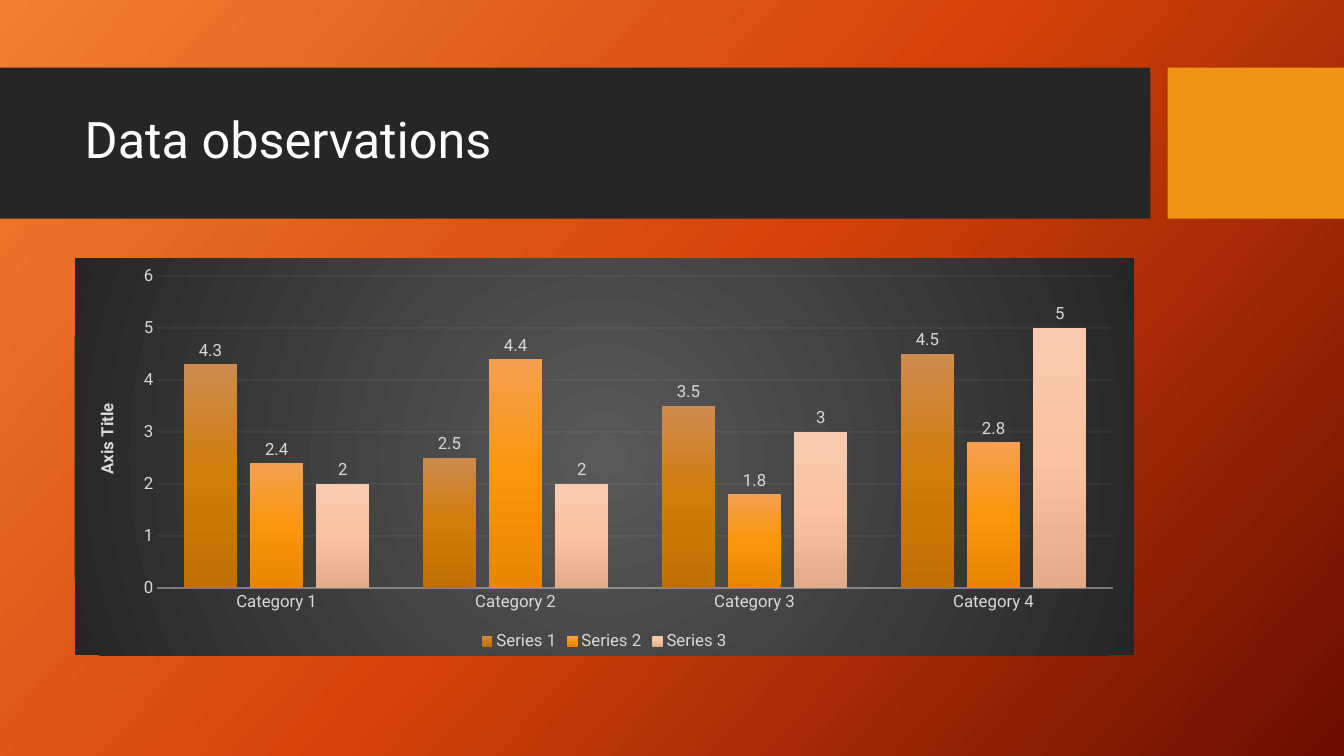
"""Build the data observations slide with its clustered column chart."""
from dataclasses import dataclass

from pptx import Presentation
from pptx.chart.data import CategoryChartData
from pptx.dml.color import RGBColor
from pptx.enum.chart import XL_CHART_TYPE, XL_LABEL_POSITION, XL_LEGEND_POSITION, XL_TICK_MARK
from pptx.enum.shapes import MSO_SHAPE
from pptx.enum.text import MSO_ANCHOR, MSO_AUTO_SIZE, PP_ALIGN
from pptx.oxml import parse_xml
from pptx.oxml.ns import nsdecls, qn
from pptx.util import Inches, Pt

COLUMNS = XL_CHART_TYPE.COLUMN_CLUSTERED
OUTSIDE_END = XL_LABEL_POSITION.OUTSIDE_END
LEGEND_BOTTOM = XL_LEGEND_POSITION.BOTTOM
NO_TICKS = XL_TICK_MARK.NONE
RECTANGLE = MSO_SHAPE.RECTANGLE
MIDDLE = MSO_ANCHOR.MIDDLE
LEFT = PP_ALIGN.LEFT
NO_AUTOFIT = MSO_AUTO_SIZE.NONE

TITLE = "Data observations"
AXIS_TITLE = "Axis Title"
CATEGORIES = [f"Category {number}" for number in range(1, 5)]
SERIES = {
    "Series 1": (4.3, 2.5, 3.5, 4.5),
    "Series 2": (2.4, 4.4, 1.8, 2.8),
    "Series 3": (2, 2, 3, 5),
}


@dataclass(frozen=True)
class Theme:
    font: str = "Roboto"
    title_size: int = 36
    chart_size: int = 12
    white: str = "FFFFFF"
    chart_text: str = "D9D9D9"
    chart_line: str = "F2F2F2"
    band: str = "262626"
    accent: str = "F09415"
    background: tuple = ("F18031", "D54209", "6A0D00")
    chart_area: tuple = ("595959", "262626")
    columns: tuple = (
        ("CE8B4F", "D07C08", "C07000"),
        ("F4A050", "FB960A", "E88600"),
        ("F8CBB0", "FAC29E", "E3AB87"),
    )


THEME = Theme()
SLIDE_WIDTH, SLIDE_HEIGHT = 13.33, 7.5
BAND_TOP, BAND_HEIGHT, BAND_WIDTH = 0.67, 1.5, 11.41
ACCENT_LEFT = 11.58
CONTENT_LEFT, CONTENT_WIDTH = 0.74, 10.51
TITLE_TOP, TITLE_HEIGHT = 0.82, 1.18
CHART_TOP, CHART_HEIGHT = 2.56, 3.94


def gradient(colors, angle=None):
    """Return an evenly stepped gradient fill, radial when no angle is given."""
    step = 100000 // (len(colors) - 1)
    stops = "".join(
        f'<a:gs pos="{index * step}"><a:srgbClr val="{color}"/></a:gs>'
        for index, color in enumerate(colors)
    )
    if angle is None:
        direction = (
            '<a:path path="circle"><a:fillToRect l="50000" t="50000" '
            'r="50000" b="50000"/></a:path>'
        )
    else:
        direction = f'<a:lin ang="{angle * 60000}" scaled="0"/>'
    return parse_xml(
        f'<a:gradFill {nsdecls("a")} rotWithShape="1">'
        f"<a:gsLst>{stops}</a:gsLst>{direction}</a:gradFill>"
    )


def apply_gradient(fill, owner, colors, angle):
    """Give a fill its own gradient stops and direction."""
    fill.gradient()
    default = owner.find(".//" + qn("a:gradFill"))
    default.getparent().replace(default, gradient(colors, angle))


def set_font(font, size, color, bold=False):
    """Set the theme typeface with a size, colour and weight."""
    font.name = THEME.font
    font.size = Pt(size)
    font.bold = bold
    font.color.rgb = RGBColor.from_string(color)


def set_line(line, width, opacity):
    """Draw a translucent chart line."""
    line.width = Pt(width)
    line.color.rgb = RGBColor.from_string(THEME.chart_line)
    color = line._ln.find(".//" + qn("a:srgbClr"))
    color.append(parse_xml(f'<a:alpha {nsdecls("a")} val="{opacity * 1000}"/>'))


def add_band(slide, left, width, color):
    """Add one block of the header strip."""
    band = slide.shapes.add_shape(
        RECTANGLE, Inches(left), Inches(BAND_TOP), Inches(width), Inches(BAND_HEIGHT)
    )
    band.shadow.inherit = False
    band.fill.solid()
    band.fill.fore_color.rgb = RGBColor.from_string(color)
    band.line.fill.background()


def add_title(slide):
    """Place the title over the header strip."""
    title = slide.shapes.title
    title.left, title.top = Inches(CONTENT_LEFT), Inches(TITLE_TOP)
    title.width, title.height = Inches(CONTENT_WIDTH), Inches(TITLE_HEIGHT)
    frame = title.text_frame
    frame.word_wrap = True
    frame.auto_size = NO_AUTOFIT
    frame.vertical_anchor = MIDDLE
    paragraph = frame.paragraphs[0]
    paragraph.alignment = LEFT
    paragraph.line_spacing = 0.9
    run = paragraph.add_run()
    run.text = TITLE
    set_font(run.font, THEME.title_size, THEME.white)
    slide.shapes._spTree.append(title._element)


def style_axes(chart):
    """Format both axes, the gridlines and the value axis title."""
    for axis in (chart.category_axis, chart.value_axis):
        axis.major_tick_mark = axis.minor_tick_mark = NO_TICKS
        set_font(axis.tick_labels.font, THEME.chart_size, THEME.chart_text)
    set_line(chart.category_axis.format.line, 1, 54)
    values = chart.value_axis
    values.minimum_scale, values.maximum_scale, values.major_unit = 0, 6, 1
    values.format.line.fill.background()
    values.has_major_gridlines = True
    set_line(values.major_gridlines.format.line, 0.75, 10)
    run = values.axis_title.text_frame.paragraphs[0].add_run()
    run.text = AXIS_TITLE
    set_font(run.font, THEME.chart_size, THEME.chart_text, bold=True)


def add_chart(slide):
    """Add the column chart with its gradients, labels and legend."""
    data = CategoryChartData()
    data.categories = CATEGORIES
    for name, values in SERIES.items():
        data.add_series(name, values)
    chart = slide.shapes.add_chart(
        COLUMNS, Inches(CONTENT_LEFT), Inches(CHART_TOP),
        Inches(CONTENT_WIDTH), Inches(CHART_HEIGHT), data,
    ).chart
    chart.has_title = False
    set_font(chart.font, THEME.chart_size, THEME.chart_text)
    area = parse_xml(f'<c:spPr {nsdecls("c", "a")}><a:ln><a:noFill/></a:ln></c:spPr>')
    area.insert(0, gradient(THEME.chart_area))
    chart._chartSpace.find(qn("c:chart")).addnext(area)

    plot = chart.plots[0]
    plot.gap_width, plot.overlap = 100, -24
    plot.vary_by_categories = False
    for series, colors in zip(plot.series, THEME.columns):
        apply_gradient(series.format.fill, series._element, colors, 90)
        labels = series.data_labels
        labels.show_value = True
        labels.position = OUTSIDE_END
        set_font(labels.font, THEME.chart_size, THEME.chart_text)

    style_axes(chart)
    chart.has_legend = True
    chart.legend.position = LEGEND_BOTTOM
    chart.legend.include_in_layout = False
    set_font(chart.legend.font, THEME.chart_size, THEME.chart_text)


def main():
    """Assemble and save the slide."""
    deck = Presentation()
    deck.slide_width, deck.slide_height = Inches(SLIDE_WIDTH), Inches(SLIDE_HEIGHT)
    slide = deck.slides.add_slide(deck.slide_layouts.get_by_name("Title Only"))
    apply_gradient(slide.background.fill, slide._element, THEME.background, 42)
    add_band(slide, 0, BAND_WIDTH, THEME.band)
    add_band(slide, ACCENT_LEFT, SLIDE_WIDTH - ACCENT_LEFT, THEME.accent)
    add_title(slide)
    add_chart(slide)
    deck.save("out.pptx")


if __name__ == "__main__":
    main()
